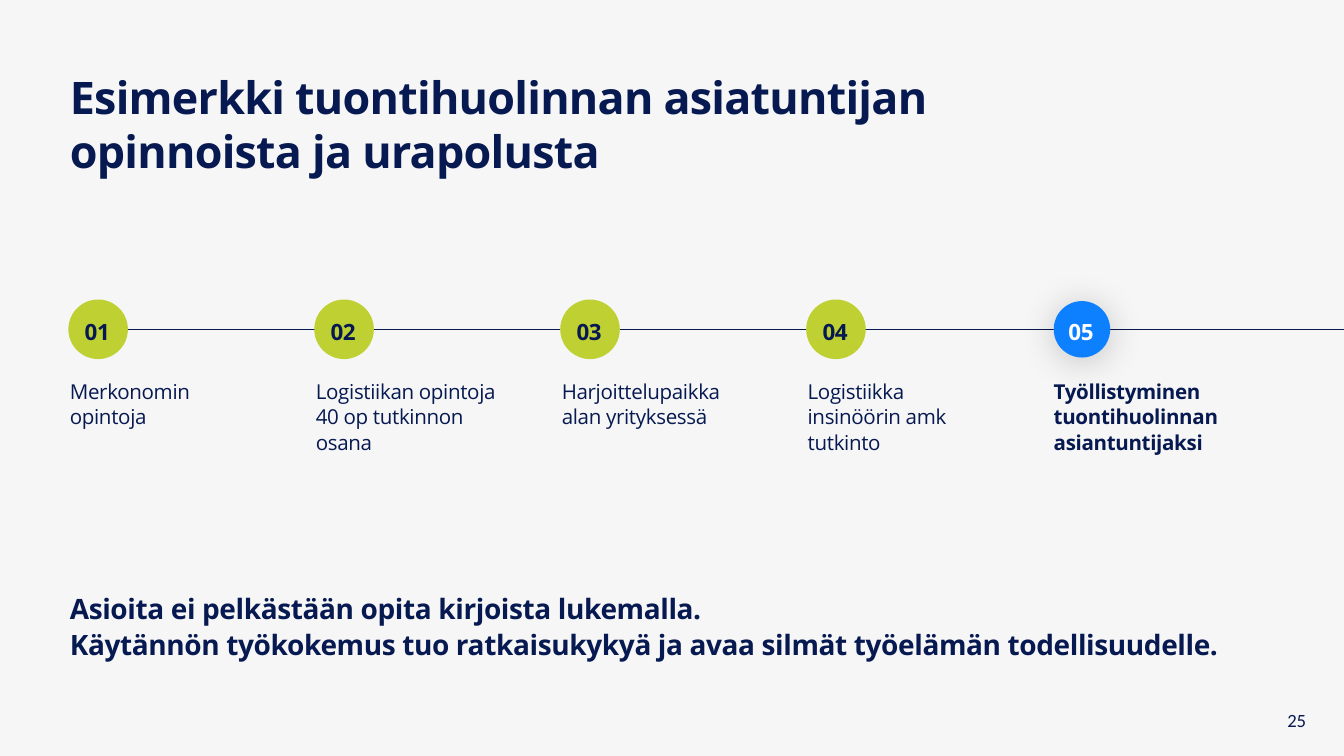
from lxml.etree import SubElement
from pptx import Presentation
from pptx.dml.color import RGBColor
from pptx.enum.shapes import MSO_CONNECTOR as Connector, MSO_SHAPE as Shape
from pptx.enum.text import MSO_ANCHOR as Anchor, MSO_AUTO_SIZE as AutoSize, PP_ALIGN as Align
from pptx.oxml.ns import qn
from pptx.util import Inches, Pt

COLORS = {
    "background": "F6F6F6",
    "navy": "071951",
    "lime": "BED032",
    "blue": "0D80FF",
    "white": "FFFFFF",
    "shadow": "000000",
}

# Step text, with the width and height of its label
STEPS = [
    ("Merkonomin opintoja", 1.07, 0.38),
    ("Logistiikan opintoja 40 op tutkinnon osana", 1.45, 0.57),
    ("Harjoittelupaikka alan yrityksessä", 1.22, 0.38),
    ("Logistiikka insinöörin amk tutkinto", 1.24, 0.57),
    ("Työllistyminen tuontihuolinnan asiantuntijaksi", 1.48, 0.57),
]
STEP_PITCH = 1.83
CIRCLE = 0.42


def rgb(name):
    return RGBColor.from_string(COLORS[name])


def write(shape, text, size, color="navy", bold=False, font="Open Sans",
          leading=None, tracking=0, anchor=Anchor.TOP, inset=0):
    """Fill a shape with text, one paragraph for each line."""
    frame = shape.text_frame
    frame.word_wrap = True
    frame.auto_size = AutoSize.NONE
    frame.vertical_anchor = anchor
    frame.margin_left = frame.margin_right = Inches(inset)
    frame.margin_top = frame.margin_bottom = Inches(inset / 2)
    frame.text = text
    for paragraph in frame.paragraphs:
        paragraph.alignment = Align.LEFT
        if leading:
            paragraph.line_spacing = Pt(leading)
        for run in paragraph.runs:
            run.font.name = font
            run.font.size = Pt(size)
            run.font.bold = bold
            run.font.color.rgb = rgb(color)
            if tracking:
                run._r.get_or_add_rPr().set("spc", str(round(tracking * 100)))


def add_text(slide, left, top, width, height, text, **style):
    box = slide.shapes.add_textbox(Inches(left), Inches(top), Inches(width), Inches(height))
    write(box, text, **style)


def add_glow(shape):
    """Soft shadow just below the shape."""
    effects = shape._element.spPr.find(qn("a:effectLst"))
    shadow = SubElement(effects, qn("a:outerShdw"), blurRad=str(Pt(20)), dist=str(Pt(2)),
                        dir="5400000", algn="ctr", rotWithShape="0")
    color = SubElement(shadow, qn("a:srgbClr"), val=COLORS["shadow"])
    SubElement(color, qn("a:alpha"), val="20000")


def add_title(slide, left, top, width, height):
    title = slide.shapes.title
    title.left, title.top = Inches(left), Inches(top)
    title.width, title.height = Inches(width), Inches(height)
    write(title, "Esimerkki tuontihuolinnan asiatuntijan opinnoista ja urapolusta",
          size=24, bold=True, leading=28.8, tracking=-0.4)


def add_step(slide, left, top, number, label, label_width, label_height, is_goal):
    # Circle
    circle = slide.shapes.add_shape(Shape.OVAL, Inches(left), Inches(top),
                                    Inches(CIRCLE), Inches(CIRCLE))
    circle.shadow.inherit = False
    circle.fill.solid()
    circle.fill.fore_color.rgb = rgb("blue" if is_goal else "lime")
    if is_goal:
        circle.line.fill.background()
        add_glow(circle)
    else:
        circle.line.color.rgb = rgb("lime")
        circle.line.width = Pt(1.67)

    # Number and label
    add_text(slide, left + 0.11, top + 0.11, 2.01, 0.22, f"{number:02}", size=12, bold=True,
             color="white" if is_goal else "navy", leading=15.6, tracking=-0.2,
             anchor=Anchor.BOTTOM)
    add_text(slide, left, top + 0.57, label_width, label_height, label, size=11,
             bold=is_goal, leading=13.7, tracking=-0.2)


def add_timeline(slide, left, top, right):
    # Line through the circle centres
    middle = Inches(top + CIRCLE / 2)
    line = slide.shapes.add_connector(Connector.STRAIGHT, Inches(left + CIRCLE / 2), middle,
                                      Inches(right), middle)
    line.line.color.rgb = rgb("navy")
    line.line.width = Pt(0.83)
    SubElement(line._element.spPr, qn("a:effectLst"))

    for index, (label, width, height) in enumerate(STEPS):
        add_step(slide, left + index * STEP_PITCH, top, index + 1, label, width, height,
                 is_goal=index == len(STEPS) - 1)


def main():
    deck = Presentation()
    # Widescreen, 16:9
    deck.slide_width = Inches(10)
    deck.slide_height = Inches(10 * 9 / 16)
    slide = deck.slides.add_slide(deck.slide_layouts[5])
    slide.background.fill.solid()
    slide.background.fill.fore_color.rgb = rgb("background")

    add_title(slide, 0.52, 0.52, 6.51, 0.8)
    add_timeline(slide, 0.52, 2.24, right=10.12)

    # Closing message
    add_text(slide, 0.52, 4.38, 9.17, 0.54,
             "Asioita ei pelkästään opita kirjoista lukemalla.\n"
             "Käytännön työkokemus tuo ratkaisukykyä ja avaa silmät työelämän todellisuudelle.",
             size=15, bold=True, leading=19.5, tracking=-0.2)

    # Page number
    add_text(slide, 9.48, 5.19, 0.44, 0.33, "25", size=10, font="Calibri",
             anchor=Anchor.MIDDLE, inset=0.1)

    deck.save("out.pptx")


if __name__ == "__main__":
    main()
